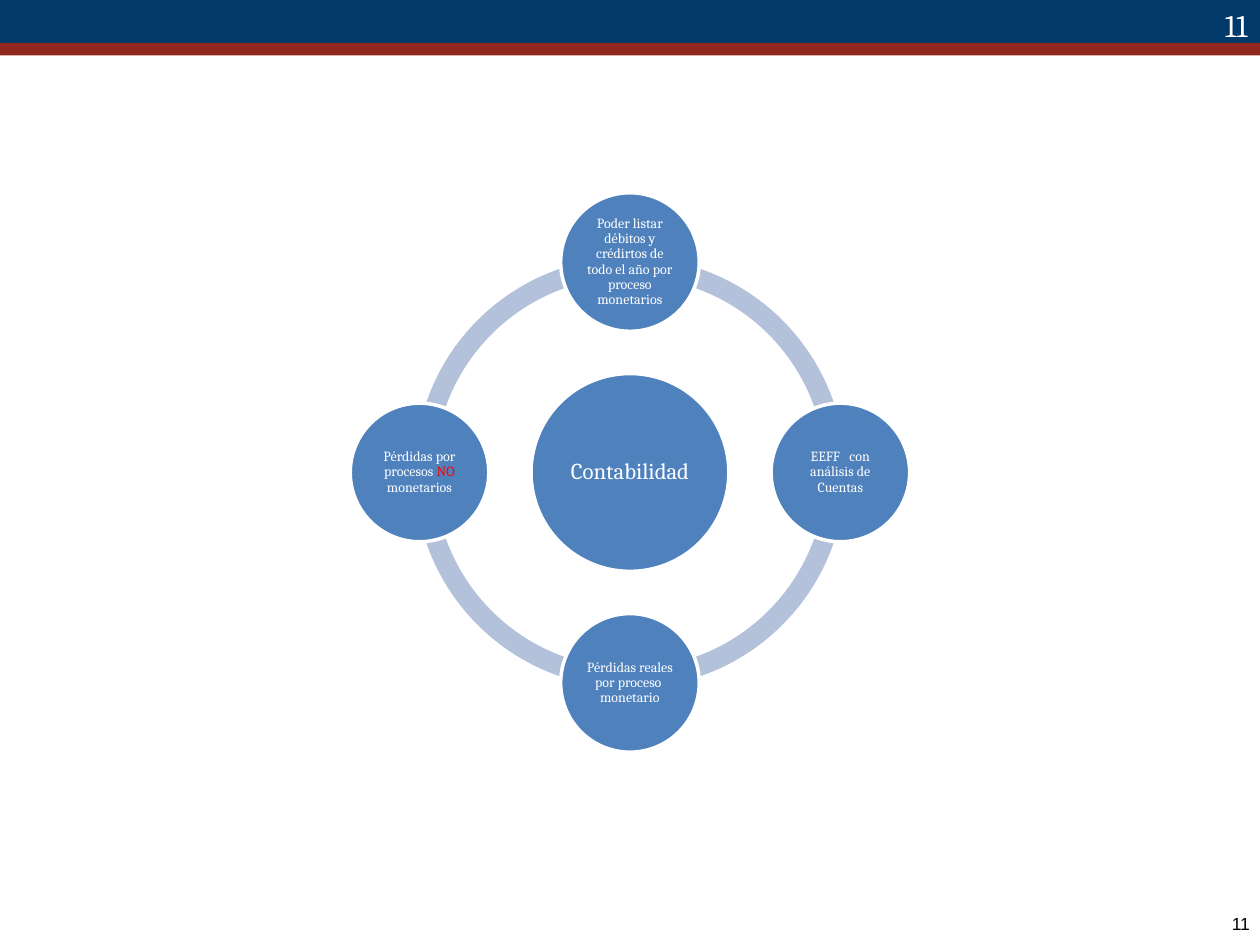
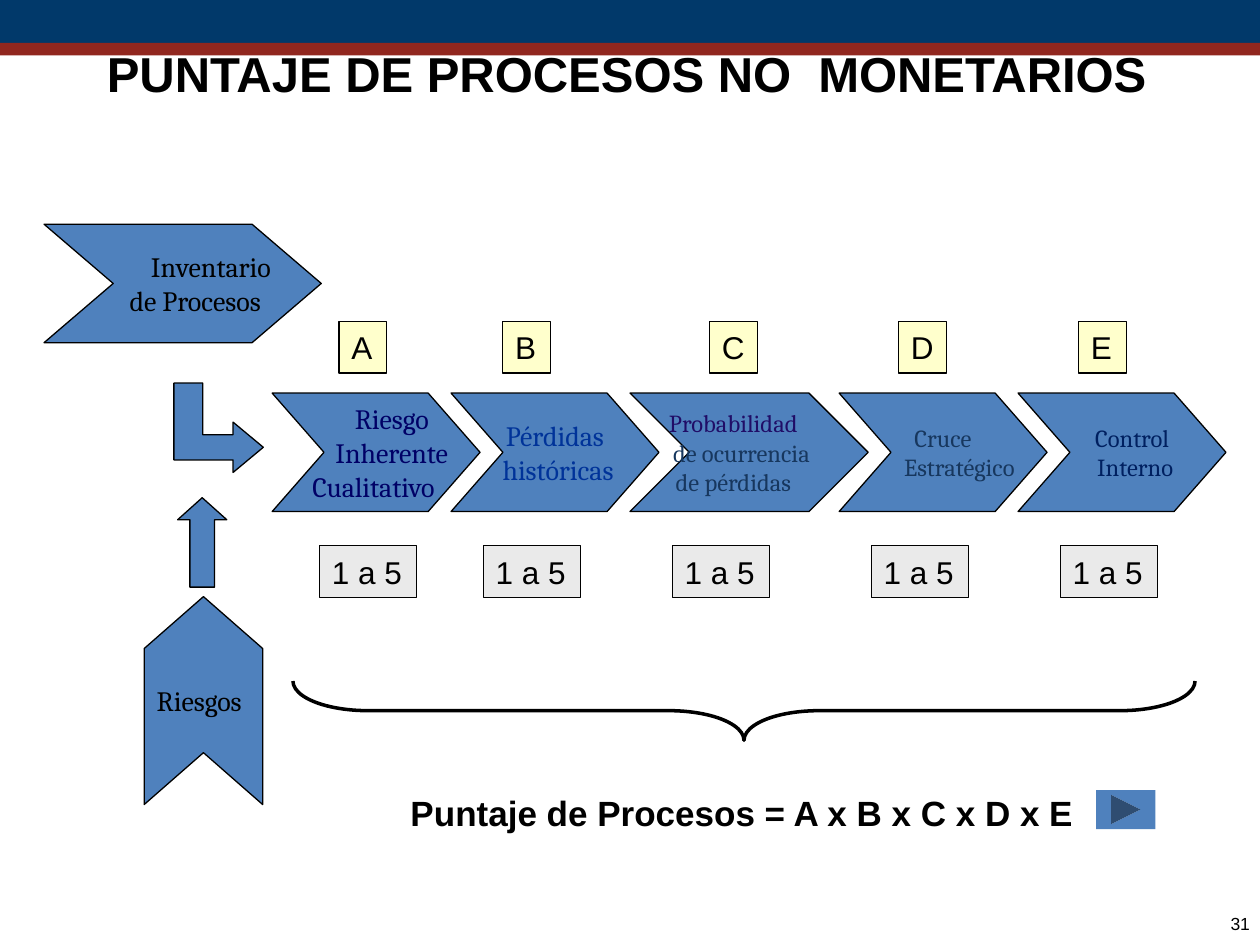
from math import cos, radians, sin

from pptx import Presentation
from pptx.dml.color import RGBColor
from pptx.enum.shapes import MSO_SHAPE as SHAPE
from pptx.enum.text import MSO_ANCHOR as ANCHOR, PP_ALIGN as ALIGN
from pptx.util import Inches, Pt

COLORS = {
    "navy": "01396A", "brick": "91271F", "blue": "4F81BD", "ring": "B3C1DB",
    "cream": "FFFFCC", "gray": "EAEAEA", "white": "FFFFFF", "black": "000000",
    "red": "FF0000", "indigo": "000066", "royal": "003399", "violet": "200D67",
    "slate": "17375E", "ink": "002060",
}

# Slide 1: hub and the circles around it, clockwise from the top
HUB = "Contabilidad"
SATELLITES = [
    [("Poder listar débitos y crédirtos de todo el año por proceso monetarios", "white")],
    [("EEFF   con análisis de Cuentas", "white")],
    [("Pérdidas reales por proceso  monetario", "white")],
    [("Pérdidas por procesos ", "white"), ("NO ", "red"), ("monetarios", "white")],
]
CENTER_X, CENTER_Y, ORBIT = 5, 3.75, 1.67
HUB_SIZE, SATELLITE_SIZE, RING_SIZE = 1.57, 1.1, 3.42
QUARTER = 54  # 90 degrees in adjustment units

# Slide 2: a line is (text, colour, indent); a negative indent is on the right
TITLE = "PUNTAJE DE PROCESOS NO  MONETARIOS"
FORMULA = "Puntaje de Procesos = A x B x C x D x E"
SCORE = "1 a 5"
INVENTORY = [("Inventario", "black", 0.45), ("de Procesos", "black", 0.2)]
RISKS = [("Riesgos", "black", 0)]
# letter, width, notch, font size, centre of letter, centre of score, lines
FACTORS = [
    ("A", 1.65, 0.438, 16, 2.88, 2.92,
     [("Riesgo", "indigo", 0.25), ("Inherente", "indigo", 0.25),
      ("Cualitativo", "indigo", -0.04)]),
    ("B", 1.65, 0.438, 16, 4.18, 4.22,
     [("Pérdidas", "royal", 0), ("históricas", "royal", 0.05)]),
    ("C", 1.89, 0.5, 14, 5.82, 5.72,
     [("Probabilidad", "violet", -0.25), ("de ocurrencia", "slate", 0.13),
      ("de pérdidas", "slate", 0)]),
    ("D", 1.65, 0.438, 14, 7.32, 7.3,
     [("Cruce", "slate", 0), ("Estratégico", "slate", 0.26)]),
    ("E", 1.65, 0.438, 14, 8.75, 8.8,
     [("Control", "ink", 0.16), ("Interno", "ink", 0.21)]),
]
FACTOR_LEFT, FACTOR_TOP, FACTOR_HEIGHT, OVERLAP = 2.16, 3.12, 0.94, 0.23
BENT_ARROW = [(2.09, 3.55), (1.85, 3.35), (1.85, 3.45), (1.61, 3.45), (1.61, 3.04),
              (1.38, 3.04), (1.38, 3.65), (1.85, 3.65), (1.85, 3.75)]


def rgb(name):
    return RGBColor.from_string(COLORS[name])


def paint(sp, fill, line=None, weight=0.75):
    sp.shadow.inherit = False
    if fill:
        sp.fill.solid()
        sp.fill.fore_color.rgb = rgb(fill)
    else:
        sp.fill.background()
    if line:
        sp.line.color.rgb = rgb(line)
        sp.line.width = Pt(weight)
    else:
        sp.line.fill.background()
    return sp


def shape(s, kind, box, fill, line=None, weight=0.75, adj=(), turn=0):
    sp = s.shapes.add_shape(kind, *map(Inches, box))
    for i, value in enumerate(adj):
        sp.adjustments[i] = value
    sp.rotation = turn
    return paint(sp, fill, line, weight)


def set_frame(sp, inset=None, wrap=False, anchor=ANCHOR.MIDDLE):
    tf = sp.text_frame
    tf.word_wrap = wrap
    tf.vertical_anchor = anchor
    if inset is not None:
        tf.margin_left = tf.margin_right = tf.margin_top = tf.margin_bottom = Inches(inset)
    return tf


def write(p, runs, size, font="Arial", align=ALIGN.LEFT, bold=False):
    """Fill a paragraph with (text, colour) runs."""
    p.alignment = align
    p.font.size, p.font.name, p.font.bold = Pt(size), font, bold
    for text, color in runs:
        r = p.add_run()
        r.text = text
        r.font.color.rgb = rgb(color)


def text_box(s, box, text, size, color="black", inset=None, wrap=True,
             anchor=ANCHOR.TOP, **style):
    sp = s.shapes.add_textbox(*map(Inches, box))
    tf = set_frame(sp, inset, wrap, anchor)
    write(tf.paragraphs[0], [(text, color)], size, **style)


def base_slide(prs, number):
    """Add a blank slide with the top bands and the page number."""
    s = prs.slides.add_slide(prs.slide_layouts[6])
    shape(s, SHAPE.RECTANGLE, (0, 0, 10, 0.34), "navy")
    shape(s, SHAPE.RECTANGLE, (0, 0.34, 10, 0.1), "brick")
    text_box(s, (8.25, 7.25, 1.67, 0.17), number, 10, inset=0, align=ALIGN.RIGHT)
    return s


def disc(s, x, y, size, runs, font_size, inset):
    sp = shape(s, SHAPE.OVAL, (x - size / 2, y - size / 2, size, size), "blue", "white", 2)
    p = set_frame(sp, inset, wrap=True).paragraphs[0]
    p.line_spacing = 0.9
    write(p, runs, font_size, "Cambria", ALIGN.CENTER)


def chevron(s, box, notch, lines, size, turn=0):
    sp = shape(s, SHAPE.CHEVRON, box, "blue", "black", adj=[notch], turn=turn)
    tf = set_frame(sp)
    for i, (text, color, indent) in enumerate(lines):
        p = tf.add_paragraph() if i else tf.paragraphs[0]
        write(p, [(text, color)], size, "Cambria", ALIGN.CENTER)
        if indent:
            side = "marL" if indent > 0 else "marR"
            p._p.get_or_add_pPr().set(side, str(Inches(abs(indent))))
    return sp


def label(s, center, top, width, text, fill):
    sp = shape(s, SHAPE.RECTANGLE, (center - width / 2, top, width, 0.41), fill, "black")
    write(set_frame(sp).paragraphs[0], [(text, "black")], 18)


def accounting_slide(prs):
    s = base_slide(prs, "11")
    text_box(s, (9.17, 0, 0.83, 0.4), "11", 18, "white", anchor=ANCHOR.BOTTOM,
             font="Cambria", align=ALIGN.RIGHT)
    ring_box = (CENTER_X - RING_SIZE / 2, CENTER_Y - RING_SIZE / 2, RING_SIZE, RING_SIZE)
    for i in range(4):
        start, end = i * QUARTER, (i + 1) % 4 * QUARTER
        shape(s, SHAPE.BLOCK_ARC, ring_box, "ring", adj=(start, end, 0.046))
    disc(s, CENTER_X, CENTER_Y, HUB_SIZE, [(HUB, "white")], 13, 0.02)
    for i, runs in enumerate(SATELLITES):
        angle = radians(90 * i - 90)
        disc(s, CENTER_X + ORBIT * cos(angle), CENTER_Y + ORBIT * sin(angle),
             SATELLITE_SIZE, runs, 8, 0.01)


def score_slide(prs):
    s = base_slide(prs, "31")
    text_box(s, (0.75, 0.3, 9.25, 0.57), TITLE, 28, bold=True)
    chevron(s, (0.35, 1.78, 2.2, 0.94), 0.584, INVENTORY, 16)

    left = FACTOR_LEFT
    for letter, width, notch, size, letter_x, score_x, lines in FACTORS:
        chevron(s, (left, FACTOR_TOP, width, FACTOR_HEIGHT), notch, lines, size)
        label(s, letter_x, 2.55, 0.38, letter, "cream")
        label(s, score_x, 4.33, 0.77, SCORE, "gray")
        left += width - OVERLAP

    points = [(Inches(x), Inches(y)) for x, y in BENT_ARROW]
    outline = s.shapes.build_freeform(*points[0])
    outline.add_line_segments(points[1:], close=True)
    paint(outline.convert_to_shape(), "blue", "black")

    risks = chevron(s, (0.79, 5.09, 1.65, 0.94), 0.438, RISKS, 16, turn=270)
    risks.text_frame._txBody.bodyPr.set("vert", "eaVert")
    shape(s, SHAPE.UP_ARROW, (1.41, 3.95, 0.39, 0.71), "blue", "black", adj=(0.5, 0.449))
    shape(s, SHAPE.LEFT_BRACE, (5.67, 2.06, 0.47, 7.16), None, "black", 2,
          adj=(1.264, 0.5), turn=270)
    text_box(s, (3.16, 6.23, 5.47, 0.43), FORMULA, 20, wrap=False, bold=True)
    shape(s, SHAPE.ACTION_BUTTON_FORWARD_OR_NEXT, (8.7, 6.27, 0.47, 0.31), "blue")


def main():
    prs = Presentation()
    prs.slide_width, prs.slide_height = Inches(10), Inches(7.5)
    accounting_slide(prs)
    score_slide(prs)
    prs.save("out.pptx")


if __name__ == "__main__":
    main()
